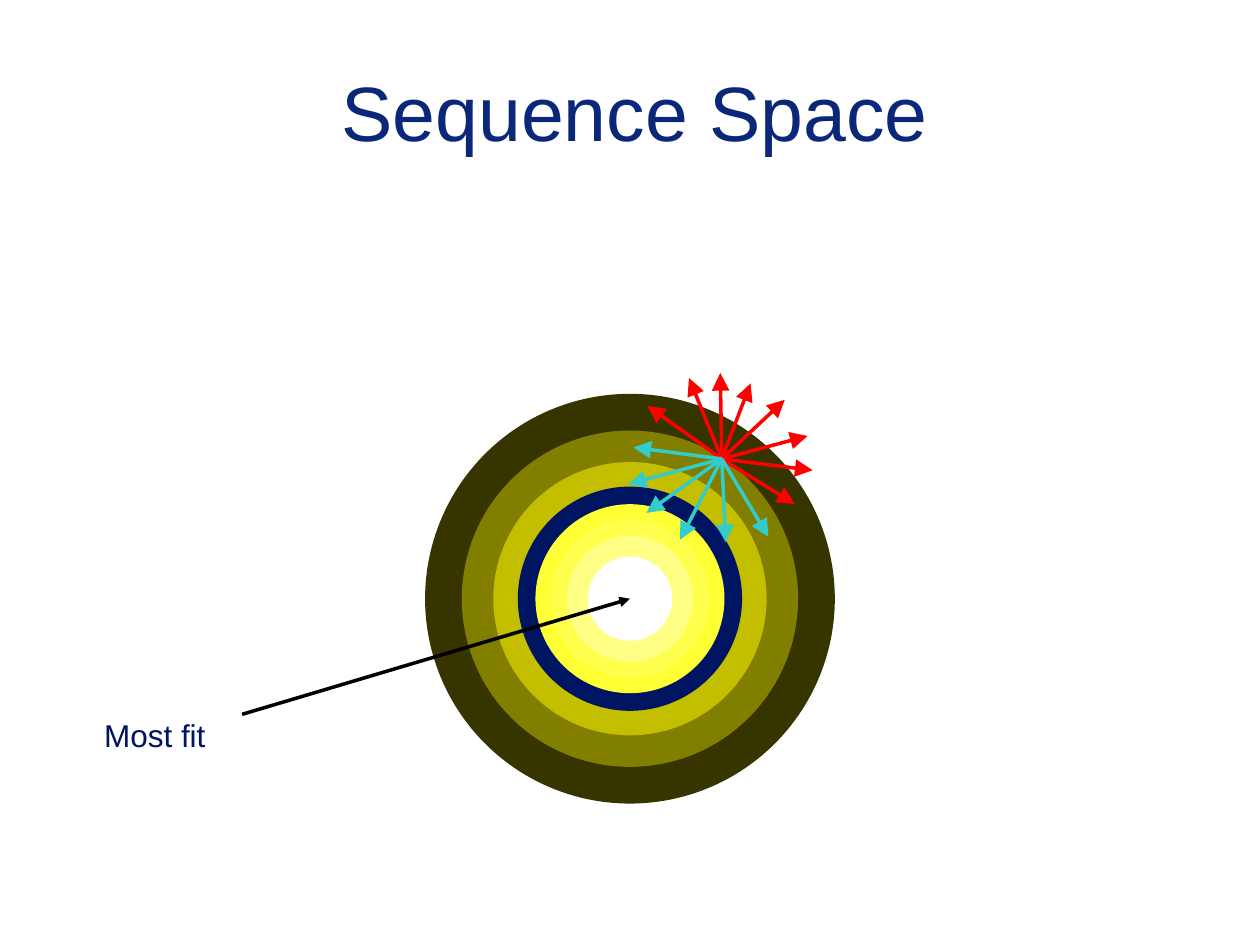
from lxml.etree import SubElement
from pptx import Presentation
from pptx.dml.color import RGBColor
from pptx.enum.shapes import MSO_CONNECTOR, MSO_SHAPE
from pptx.enum.text import MSO_ANCHOR, PP_ALIGN
from pptx.oxml.ns import qn
from pptx.util import Cm, Pt

NAVY, RED, TEAL = "001561", "FF0000", "33CCCC"

# Diameter and fill, from the least fit ring to the fittest
RINGS = [(8.26, "363500"), (6.78, "817E00"), (5.51, "C3BE00"),
         (4.45, NAVY), (3.81, "FFFF35"), (3.18, "FFFF4D"),
         (2.54, "FFFF85"), (1.7, "FFFFFF")]

# Arrow tips, measured from the shared starting point
TIPS = {
    RED: [(1.27, -1.19), (1.73, -0.46), (1.83, 0.23), (1.47, 0.91),
          (-1.5, -1.07), (-0.66, -1.63), (-0.03, -1.73), (0.58, -1.52)],
    TEAL: [(0.94, 1.57), (0.08, 1.68), (-0.84, 1.63), (-1.52, 1.09),
           (-1.88, 0.51), (-1.78, -0.23)],
}


def tint(code):
    return RGBColor.from_string(code)


def style(frame, size, code):
    font = frame.paragraphs[0].runs[0].font
    font.name, font.size = "Arial", Pt(size)
    font.color.rgb = tint(code)


def arrow(shapes, start, end, code, head="med"):
    line = shapes.add_connector(MSO_CONNECTOR.STRAIGHT,
                                *(Cm(n) for n in (*start, *end)))
    line.line.color.rgb = tint(code)
    line.line.width = Pt(2)
    SubElement(line.line._get_or_add_ln(), qn("a:tailEnd"),
               type="triangle", w=head, len=head)
    SubElement(line._element.spPr, qn("a:effectLst"))


def add_title(slide, x, y, w, h):
    title = slide.shapes.title
    title.left, title.top, title.width, title.height = map(Cm, (x, y, w, h))
    frame = title.text_frame
    frame.text = "Sequence Space"
    frame.vertical_anchor = MSO_ANCHOR.MIDDLE
    frame.paragraphs[0].alignment = PP_ALIGN.CENTER
    style(frame, 44, "0A2779")


def add_rings(slide, x, y, size):
    for wide, code in RINGS:
        gap = (size - wide) / 2
        ring = slide.shapes.add_shape(MSO_SHAPE.OVAL, Cm(x + gap), Cm(y + gap),
                                      Cm(wide), Cm(wide))
        ring.shadow.inherit = False
        ring.fill.solid()
        ring.fill.fore_color.rgb = tint(code)
        if code == NAVY:
            ring.line.color.rgb = tint(code)
            ring.line.width = Pt(2)
        else:
            ring.line.fill.background()


def add_burst(slide, x, y):
    group = slide.shapes.add_group_shape()
    for code, tips in TIPS.items():
        for dx, dy in tips:
            arrow(group.shapes, (x, y), (x + dx, y + dy), code, "lg")


def add_label(slide, x, y, w, h):
    box = slide.shapes.add_textbox(Cm(x), Cm(y), Cm(w), Cm(h))
    box.text_frame.word_wrap = True
    box.text_frame.text = "Most fit"
    style(box.text_frame, 18, NAVY)


def main():
    deck = Presentation()
    deck.slide_width, deck.slide_height = Cm(25.4), Cm(19.05)
    slide = deck.slides.add_slide(deck.slide_layouts[5])
    add_title(slide, 1.27, 0.64, 23.06, 3.18)

    # Fitness rings around one centre
    mid_x, mid_y, size = 12.7, 12.07, RINGS[0][0]
    add_rings(slide, mid_x - size / 2, mid_y - size / 2, size)

    # Mutations from one sequence
    add_burst(slide, 14.55, 9.25)

    # Pointer to the fittest sequence
    arrow(slide.shapes, (4.88, 14.4), (mid_x, mid_y), "000000")
    add_label(slide, 1.85, 14.3, 3.84, 1.45)
    deck.save("out.pptx")


if __name__ == "__main__":
    main()
